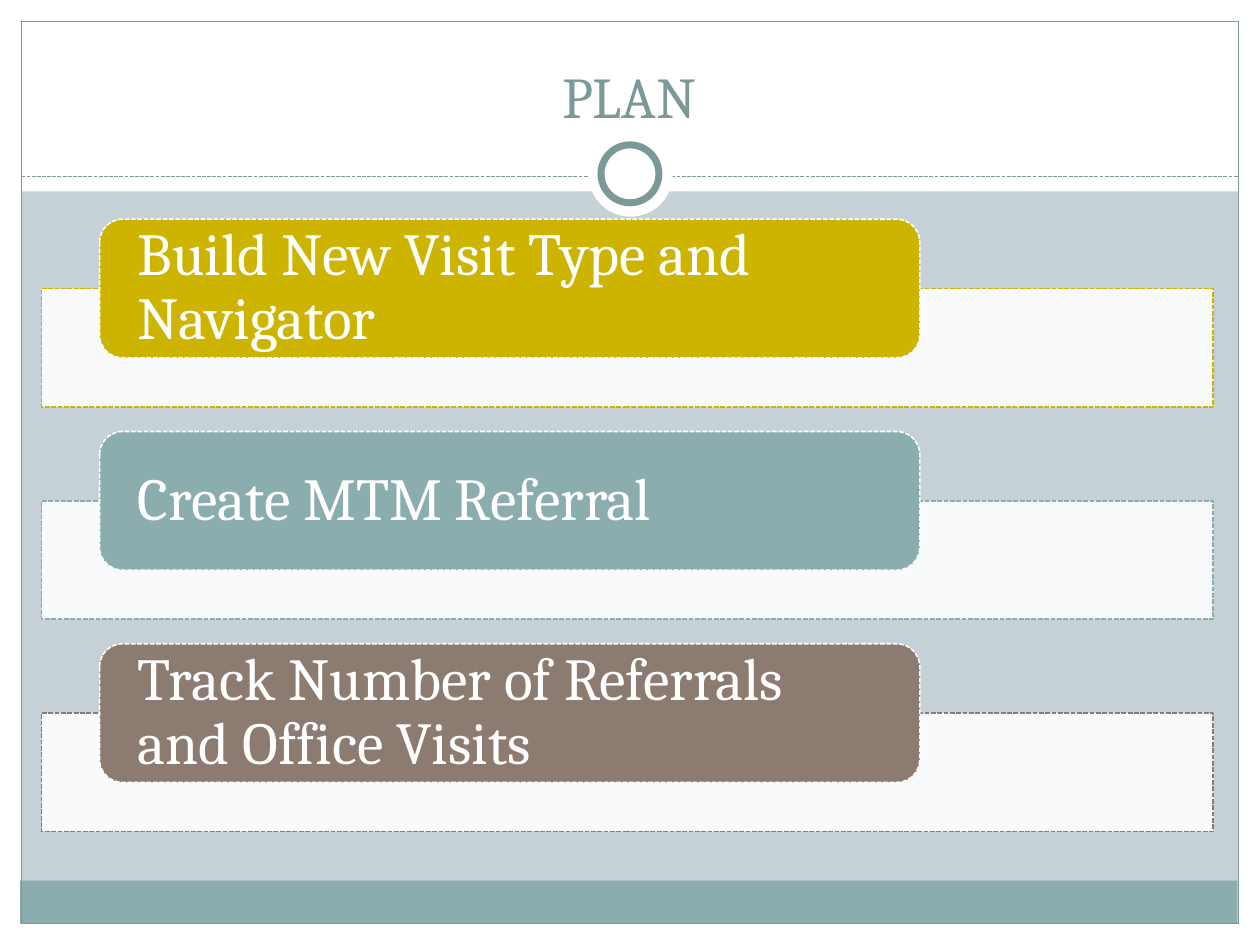
from lxml import etree
from pptx import Presentation
from pptx.dml.color import RGBColor
from pptx.enum.dml import MSO_LINE
from pptx.enum.shapes import MSO_CONNECTOR, MSO_SHAPE
from pptx.enum.text import MSO_ANCHOR, PP_ALIGN
from pptx.oxml.ns import qn
from pptx.util import Inches, Pt

RECT, ROUND, OVAL = MSO_SHAPE.RECTANGLE, MSO_SHAPE.ROUNDED_RECTANGLE, MSO_SHAPE.OVAL
STRAIGHT = MSO_CONNECTOR.STRAIGHT
DASH = MSO_LINE.SQUARE_DOT
MIDDLE, BOTTOM = MSO_ANCHOR.MIDDLE, MSO_ANCHOR.BOTTOM
LEFT, CENTER = PP_ALIGN.LEFT, PP_ALIGN.CENTER

COLORS = {
    "background": "C5D1D7",
    "white": "FFFFFF",
    "frame": "7C999A",
    "teal": "8CADAE",
    "gold": "CCB400",
    "brown": "8C7B70",
}
FONT = "Cambria"
STEPS = [
    ("Build New Visit Type and Navigator", "gold"),
    ("Create MTM Referral", "teal"),
    ("Track Number of Referrals and Office Visits", "brown"),
]
STEP_TOP, STEP_PITCH = 1.74, 1.685


def rgb(name):
    return RGBColor.from_string(COLORS[name])


class Deck:
    def __init__(self, prs):
        self.s = prs.slides.add_slide(prs.slide_layouts[5])
        fill = self.s.background.fill
        fill.solid()
        fill.fore_color.rgb = rgb("background")

    def outline(self, line, color, width, dash=None):
        line.color.rgb = rgb(color)
        line.width = Pt(width)
        if dash:
            line.dash_style = dash

    def shape(self, kind, box, fill=None, line=None, width=0.75, dash=None, alpha=None):
        sp = self.s.shapes.add_shape(kind, *map(Inches, box))
        sp.shadow.inherit = False
        if fill:
            sp.fill.solid()
            sp.fill.fore_color.rgb = rgb(fill)
        else:
            sp.fill.background()
        if alpha:
            color = sp.element.spPr.find(qn("a:solidFill"))[0]
            etree.SubElement(color, qn("a:alpha"), val=str(alpha * 1000))
        if line:
            self.outline(sp.line, line, width, dash)
        else:
            sp.line.fill.background()
        return sp

    def line(self, x1, y1, x2, y2, color, width, dash):
        cn = self.s.shapes.add_connector(STRAIGHT, *map(Inches, (x1, y1, x2, y2)))
        self.outline(cn.line, color, width, dash)
        etree.SubElement(cn.element.spPr, qn("a:effectLst"))

    def text(self, sp, text, size, color, frame, paragraph):
        tf = sp.text_frame
        p = tf.paragraphs[0]
        r = p.add_run()
        r.text = text
        r.font.color.rgb = rgb(color)
        font = {"name": FONT, "size": Pt(size)}
        for target, values in ((tf, frame), (p, paragraph), (r.font, font)):
            for name, value in values.items():
                setattr(target, name, value)

    def title(self, text, box):
        sp = self.s.shapes.title
        sp.left, sp.top, sp.width, sp.height = map(Inches, box)
        self.text(sp, text, 33, "frame",
                  {"vertical_anchor": BOTTOM, "word_wrap": True}, {"alignment": CENTER})
        sp.element.getparent().append(sp.element)

    def step(self, top, text, color):
        self.shape(RECT, (0.33, top + 0.55, 9.3, 0.94), "white", color, 0.9, DASH, alpha=90)
        sp = self.shape(ROUND, (0.79, top, 6.51, 1.1), color, "white", 0.9, DASH)
        frame = {"vertical_anchor": MIDDLE, "word_wrap": True,
                 "margin_left": Inches(0.25), "margin_right": Inches(0.25),
                 "margin_top": 0, "margin_bottom": 0}
        self.text(sp, text, 34, "white", frame, {"alignment": LEFT, "line_spacing": 0.9})


def main():
    prs = Presentation()
    prs.slide_width, prs.slide_height = Inches(10), Inches(7.5)
    deck = Deck(prs)

    for box in ((0, 7.33, 10, 0.17), (0, 0, 10, 1.52), (0, 0, 0.17, 7.5), (9.83, 0, 0.17, 7.5)):
        deck.shape(RECT, box, "white")
    deck.shape(RECT, (0.16, 6.99, 9.66, 0.34), "teal")
    deck.shape(RECT, (0.17, 0.17, 9.66, 7.16), line="frame")
    deck.line(0.17, 1.4, 9.83, 1.4, "frame", 0.75, DASH)
    deck.shape(OVAL, (4.67, 1.05, 0.67, 0.67), "white")
    deck.shape(OVAL, (4.77, 1.15, 0.46, 0.46), "white", "frame", 4)

    deck.title("PLAN", (0.33, 0.25, 9.33, 0.83))
    for i, (text, color) in enumerate(STEPS):
        deck.step(STEP_TOP + i * STEP_PITCH, text, color)

    prs.save("out.pptx")


if __name__ == "__main__":
    main()
